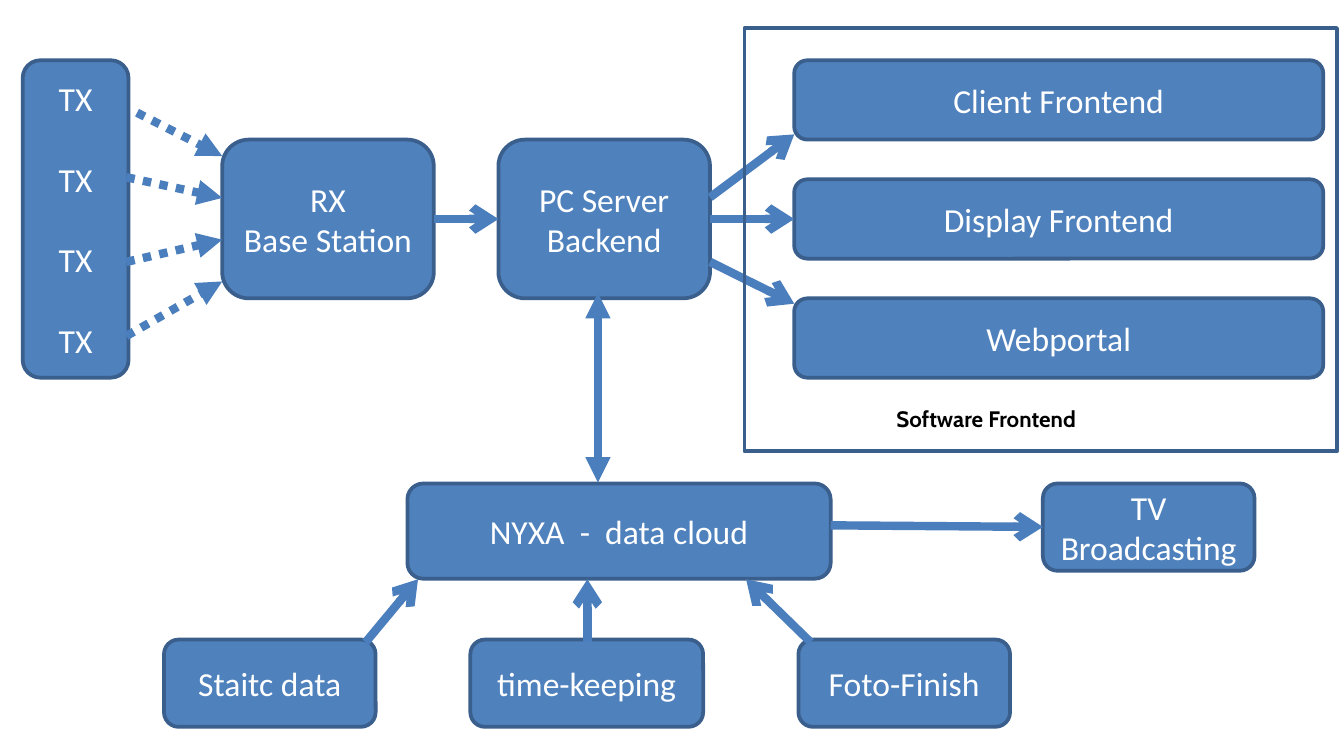
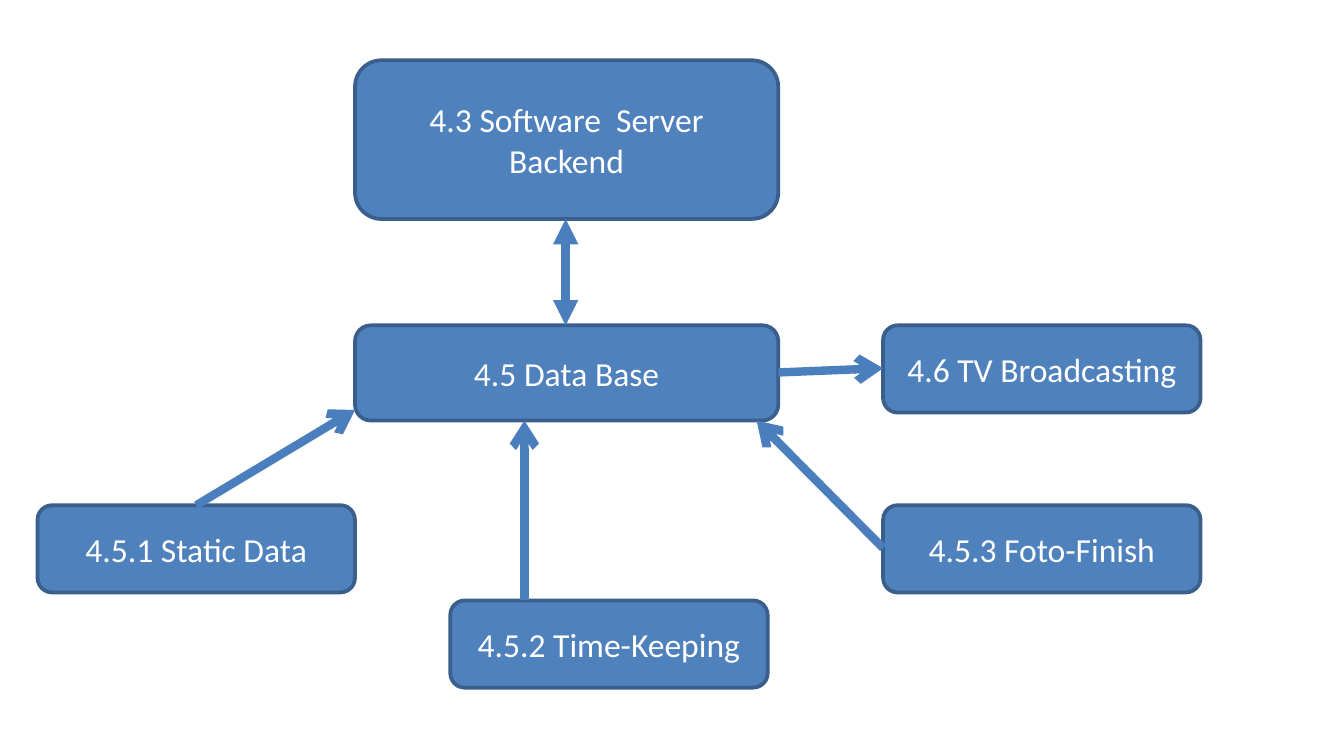
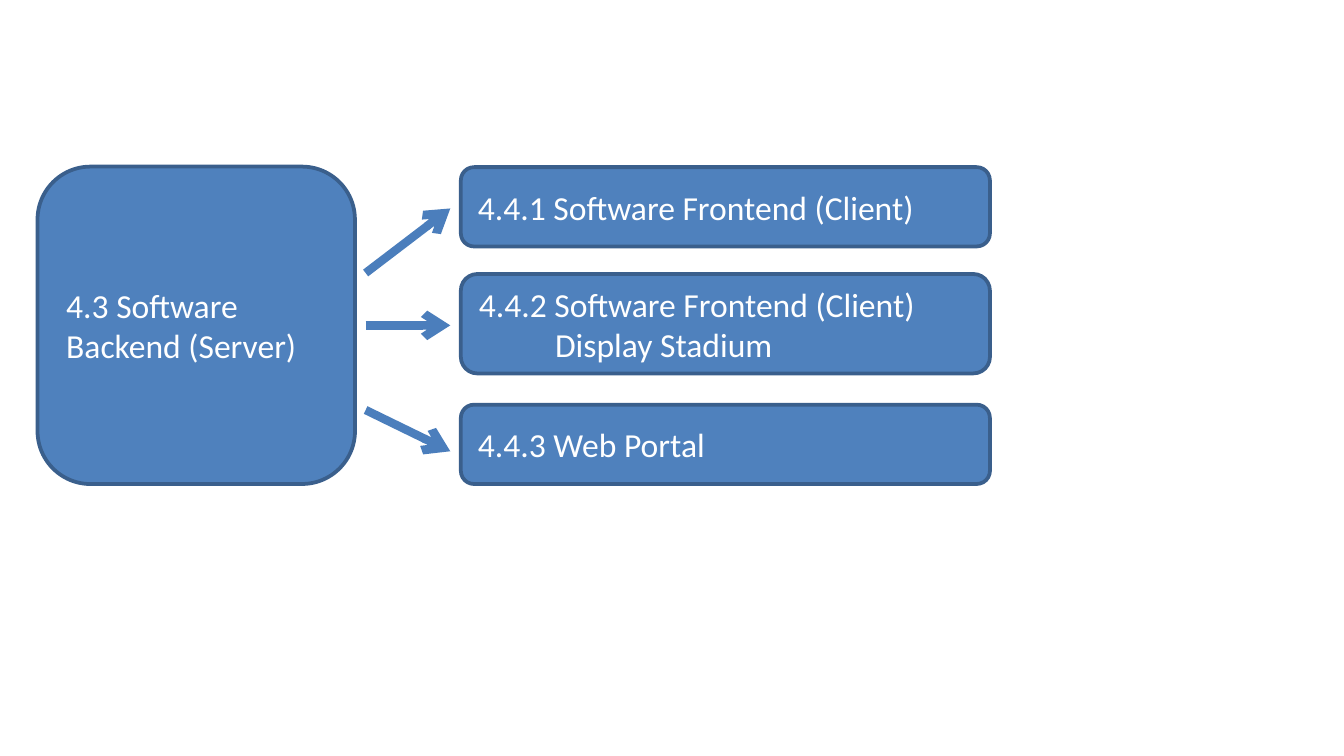
from dataclasses import dataclass

import pptx
import pptx.dml.color
import pptx.enum.dml
import pptx.enum.shapes
import pptx.enum.text
import pptx.oxml
import pptx.oxml.ns
import pptx.slide
import pptx.text.text
import pptx.util

Cm = pptx.util.Cm
Pt = pptx.util.Pt
Color = pptx.dml.color.RGBColor
Kind = pptx.enum.shapes.MSO_SHAPE
Align = pptx.enum.text.PP_ALIGN
Slide = pptx.slide.Slide

FILL = Color(0x4F, 0x81, 0xBD)
EDGE = Color(0x3A, 0x5F, 0x8C)
ARROW = Color(0x4B, 0x7E, 0xBC)
WHITE = Color(0xFF, 0xFF, 0xFF)
BLACK = Color(0x00, 0x00, 0x00)
FONT = "Calibri"

TOP = 1.14    # upper edge of the first row
LOW = 1.65    # height of a small box


@dataclass(frozen=True)
class Box:
    """Rounded box; lengths in cm, gap (before) in points."""
    left: float
    top: float
    width: float
    height: float
    lines: tuple[str, ...]
    align: Align = Align.CENTER
    gap: float = 0
    indent: float = 0


@dataclass(frozen=True)
class Link:
    """Arrow between two points in cm, with its end shapes."""
    start: tuple[float, float]
    end: tuple[float, float]
    tail: str = "arrow"
    head: str = "none"
    dotted: bool = False


def add_run(par: pptx.text.text._Paragraph, text: str, font: str,
            size: float, color: Color, bold: bool = False) -> None:
    run = par.add_run()
    run.text = text
    run.font.name = font
    run.font.size = Pt(size)
    run.font.bold = bold
    run.font.color.rgb = color


def draw_box(slide: Slide, box: Box) -> None:
    shape = slide.shapes.add_shape(
        Kind.ROUNDED_RECTANGLE, Cm(box.left), Cm(box.top), Cm(box.width), Cm(box.height))
    shape.shadow.inherit = False
    shape.fill.solid()
    shape.fill.fore_color.rgb = FILL
    shape.line.color.rgb = EDGE
    shape.line.width = Pt(2)
    frame = shape.text_frame
    frame.word_wrap = True
    frame.vertical_anchor = pptx.enum.text.MSO_ANCHOR.MIDDLE
    for row, line in enumerate(box.lines):
        par = frame.add_paragraph() if row else frame.paragraphs[0]
        par.alignment = box.align
        if row and box.gap:
            par.space_before = Pt(box.gap)
        if row and box.indent:
            par._p.get_or_add_pPr().set("marL", str(Cm(box.indent)))
        add_run(par, line, FONT, 18, WHITE)


def draw_link(slide: Slide, link: Link) -> None:
    line = slide.shapes.add_connector(
        pptx.enum.shapes.MSO_CONNECTOR.STRAIGHT,
        *(Cm(value) for value in link.start + link.end))
    line.line.color.rgb = ARROW
    line.line.width = Pt(4.5)
    if link.dotted:
        line.line.dash_style = pptx.enum.dml.MSO_LINE.ROUND_DOT
    edge = line.line._get_or_add_ln()
    for tag, kind in (("headEnd", link.head), ("tailEnd", link.tail)):
        end = pptx.oxml.parse_xml(
            f'<a:{tag} {pptx.oxml.ns.nsdecls("a")} type="{kind}"/>')
        edge.append(end)
    line._element.spPr.append(
        pptx.oxml.parse_xml(f'<a:effectLst {pptx.oxml.ns.nsdecls("a")}/>'))


def draw_front(slide: Slide) -> None:
    """Outline and caption around the frontend boxes."""
    frame = slide.shapes.add_shape(
        Kind.RECTANGLE, Cm(14.07), Cm(0.53), Cm(11.2), Cm(8))
    frame.shadow.inherit = False
    frame.fill.background()
    frame.line.color.rgb = EDGE
    frame.line.width = Pt(2)
    label = slide.shapes.add_textbox(Cm(16.69), Cm(7.54), Cm(4.32), Cm(0.76))
    label.text_frame.word_wrap = False
    label.text_frame.auto_size = pptx.enum.text.MSO_AUTO_SIZE.SHAPE_TO_FIT_TEXT
    add_run(label.text_frame.paragraphs[0], "Software Frontend",
            "Cabin", 12, BLACK, bold=True)


def add_page(deck, boxes: list[Box], links: list[Link]) -> Slide:
    slide = deck.slides.add_slide(deck.slide_layouts[6])
    for box in boxes:
        draw_box(slide, box)
    for link in links:
        draw_link(slide, link)
    return slide


def add_system(deck) -> None:
    fronts = ("Client Frontend", "Display Frontend", "Webportal")
    boxes = [
        Box(0.43, TOP, 2, 6, ("TX",) * 4, gap=21.6),
        Box(4.2, 2.64, 4, 3, ("RX", "Base Station")),
        *(Box(15.01, TOP + 2.25 * row, 10, 1.5, (name,))
          for row, name in enumerate(fronts)),
        Box(3.1, 12.09, 4, LOW, ("Staitc data",)),
        Box(7.7, 9.14, 8, 1.8, ("NYXA  -  data cloud",)),
        Box(8.89, 12.09, 4.4, LOW, ("time-keeping",)),
        Box(15.09, 12.09, 4, LOW, ("Foto-Finish",)),
        Box(19.71, 9.14, 4, LOW, ("TV Broadcasting",)),
        Box(9.42, 2.64, 4, 3, ("PC Server", "Backend")),
    ]
    signals = ((2.59, 2.13), (2.39, 3.35), (2.39, 4.95), (2.39, 6.35))
    links = [
        Link((8.2, 4.14), (9.42, 4.14)),
        Link((13.42, 4.14), (15.01, 4.14)),
        Link((13.42, 3.73), (15.01, 2.54)),
        Link((13.42, 4.95), (15.01, 5.74)),
        Link((11.3, 9.12), (11.3, 5.54), "triangle", "triangle"),
        Link((6.91, 12.14), (7.9, 10.95)),
        Link((11.1, 12.14), (11.1, 10.95)),
        Link((15.32, 12.14), (14.1, 10.95)),
        Link((15.7, 9.93), (19.71, 9.96)),
        *(Link(start, (4.2, 2.95 + 0.79 * row), "triangle", dotted=True)
          for row, start in enumerate(signals)),
    ]
    draw_front(add_page(deck, boxes, links))


def add_data(deck) -> None:
    boxes = [
        Box(0.71, 9.55, 6, LOW, ("4.5.1 Static Data",)),
        Box(6.71, 6.15, 8, 1.8, ("4.5 Data Base",)),
        Box(8.51, 11.35, 6, LOW, ("4.5.2 Time-Keeping",)),
        Box(16.69, 9.55, 6, LOW, ("4.5.3 Foto-Finish",)),
        Box(16.69, 6.15, 6, LOW, ("4.6 TV Broadcasting",)),
        Box(6.71, TOP, 8, 3, ("4.3 Software  Server", "Backend")),
    ]
    links = [
        Link((10.69, 6.15), (10.69, 4.14), "triangle", "triangle"),
        Link((3.71, 9.55), (6.71, 7.75)),
        Link((9.91, 11.35), (9.91, 7.95)),
        Link((16.69, 10.36), (14.3, 7.95)),
        Link((14.71, 7.04), (16.69, 6.96)),
    ]
    add_page(deck, boxes, links)


def add_client(deck) -> None:
    left = Align.LEFT
    boxes = [
        Box(8.71, 3.16, 10, 1.5, ("4.4.1 Software Frontend (Client)",), left),
        Box(8.71, 5.18, 10, 1.88,
            ("4.4.2 Software Frontend (Client)", "Display Stadium"), left, indent=1.44),
        Box(8.71, 7.65, 10, 1.5, ("4.4.3 Web Portal",), left),
        Box(0.71, 3.15, 6, 6, ("4.3 Software Backend (Server)",), left),
    ]
    rows = ((6.15, 6.15), (5.16, 3.94), (7.75, 8.53))
    links = [Link((6.91, start), (8.51, end)) for start, end in rows]
    add_page(deck, boxes, links)


def main() -> None:
    deck = pptx.Presentation()
    deck.slide_width = Cm(25.4)
    deck.slide_height = Cm(14.29)
    add_system(deck)
    add_data(deck)
    add_client(deck)
    deck.save("out.pptx")


if __name__ == "__main__":
    main()
